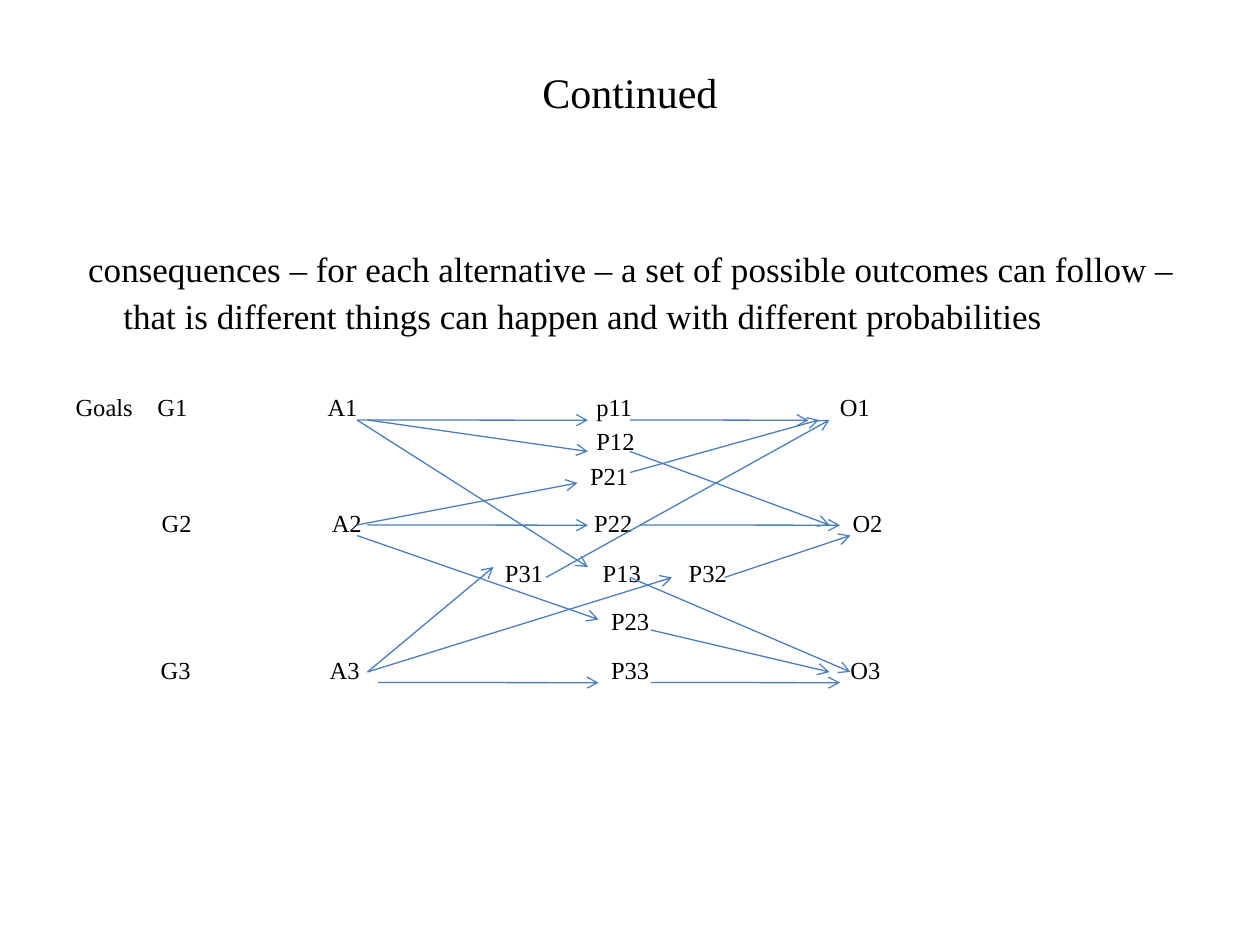
from typing import NamedTuple

from lxml import etree
from pptx import Presentation
from pptx.dml.color import RGBColor
from pptx.enum.shapes import MSO_CONNECTOR
from pptx.enum.text import MSO_ANCHOR, MSO_AUTO_SIZE, PP_ALIGN
from pptx.oxml.ns import qn
from pptx.util import Inches, Pt

STRAIGHT = MSO_CONNECTOR.STRAIGHT
TOP, MIDDLE = MSO_ANCHOR.TOP, MSO_ANCHOR.MIDDLE
LEFT, CENTER = PP_ALIGN.LEFT, PP_ALIGN.CENTER
NO_FIT = MSO_AUTO_SIZE.NONE
COLORS = {"text": "000000", "arrow": "4B7EBC"}
FONT = "Times New Roman"
CELL = Inches(1) // 12
TILT = Pt(0.13)


class Label(NamedTuple):
    text: str
    col: float


class Row(NamedTuple):
    top: float
    labels: tuple[Label, ...]


class Arrow(NamedTuple):
    x1: int
    y1: int
    x2: int
    y2: int


ROWS = [
    Row(37.35, (Label("Goals", 7.2), Label("G1", 15), Label("A1", 31.2), Label("p11", 56.8), Label("O1", 80))),
    Row(40.6, (Label("P12", 56.8),)),
    Row(43.9, (Label("P21", 56.2),)),
    Row(48.4, (Label("G2", 15.4), Label("A2", 31.6), Label("P22", 56.6), Label("O2", 81.2))),
    Row(53.1, (Label("P31", 48.1), Label("P13", 57.4), Label("P32", 65.6))),
    Row(57.7, (Label("P23", 58.2),)),
    Row(62.4, (Label("G3", 15.3), Label("A3", 31.4), Label("P33", 58.2), Label("O3", 81))),
]

ARROWS = [
    Arrow(34, 40, 56, 40), Arrow(60, 40, 77, 40),
    Arrow(34, 40, 56, 54), Arrow(60, 55, 81, 64),
    Arrow(35, 50, 56, 50), Arrow(61, 50, 80, 50),
    Arrow(34, 50, 55, 46), Arrow(60, 45, 78, 40),
    Arrow(36, 65, 57, 65), Arrow(62, 65, 80, 65),
    Arrow(34, 51, 57, 59), Arrow(62, 60, 79, 64),
    Arrow(35, 40, 56, 43), Arrow(60, 43, 79, 50),
    Arrow(35, 64, 64, 55), Arrow(69, 55, 81, 51),
    Arrow(35, 64, 47, 54), Arrow(52, 55, 79, 40),
]


def write(p, text: str, *, size: float, align=LEFT, line=None) -> None:
    p.alignment = align
    p.space_before = Pt(0)
    if line:
        p.line_spacing = Pt(line)
    r = p.add_run()
    r.text = text
    r.font.name = FONT
    r.font.size = Pt(size)
    r.font.color.rgb = RGBColor.from_string(COLORS["text"])


def set_indent(p, left: float, first: float) -> None:
    pPr = p._p.get_or_add_pPr()
    pPr.set("marL", str(Inches(left)))
    pPr.set("indent", str(Inches(first)))
    etree.SubElement(pPr, qn("a:buNone"))


def draw_label(s, label: Label, top: float) -> None:
    sp = s.shapes.add_textbox(int(label.col * CELL), int(top * CELL), 6 * CELL, 3 * CELL)
    tf = sp.text_frame
    tf.word_wrap = True
    tf.margin_left = tf.margin_right = tf.margin_top = tf.margin_bottom = 0
    write(tf.paragraphs[0], label.text, size=14)


def draw_arrow(s, arrow: Arrow) -> None:
    x1, y1, x2, y2 = (v * CELL for v in arrow)
    cn = s.shapes.add_connector(STRAIGHT, x1, y1, x2, y2 + TILT if y1 == y2 else y2)
    cn.line.width = Pt(0.75)
    cn.line.color.rgb = RGBColor.from_string(COLORS["arrow"])
    etree.SubElement(cn.line._get_or_add_ln(), qn("a:tailEnd"), type="arrow")
    etree.SubElement(cn._element.spPr, qn("a:effectLst"))


def place(sp, top: float, height: float, anchor):
    sp.left, sp.width = Inches(0.5), Inches(9)
    sp.top, sp.height = Inches(top), Inches(height)
    tf = sp.text_frame
    tf.word_wrap = True
    tf.auto_size = NO_FIT
    tf.vertical_anchor = anchor
    return tf


def main() -> None:
    prs = Presentation()
    prs.slide_width, prs.slide_height = Inches(10), Inches(7.5)
    s = prs.slides.add_slide(prs.slide_layouts[1])

    tf = place(s.shapes.title, 0.3, 1.25, MIDDLE)
    tf.margin_bottom = Inches(0.45)
    write(tf.paragraphs[0], "Continued", size=24, align=CENTER)

    tf = place(s.placeholders[1], 1.75, 4.95, TOP)
    tf.margin_top = Inches(0.17)
    p = tf.paragraphs[0]
    write(p, "consequences – for each alternative – a set of possible outcomes can follow – "
             "that is different things can happen and with different probabilities",
          size=20, line=26.9)
    set_indent(p, 0.38, -0.28)

    for row in ROWS:
        for label in row.labels:
            draw_label(s, label, row.top)
    for arrow in ARROWS:
        draw_arrow(s, arrow)

    prs.save("out.pptx")


if __name__ == "__main__":
    main()
